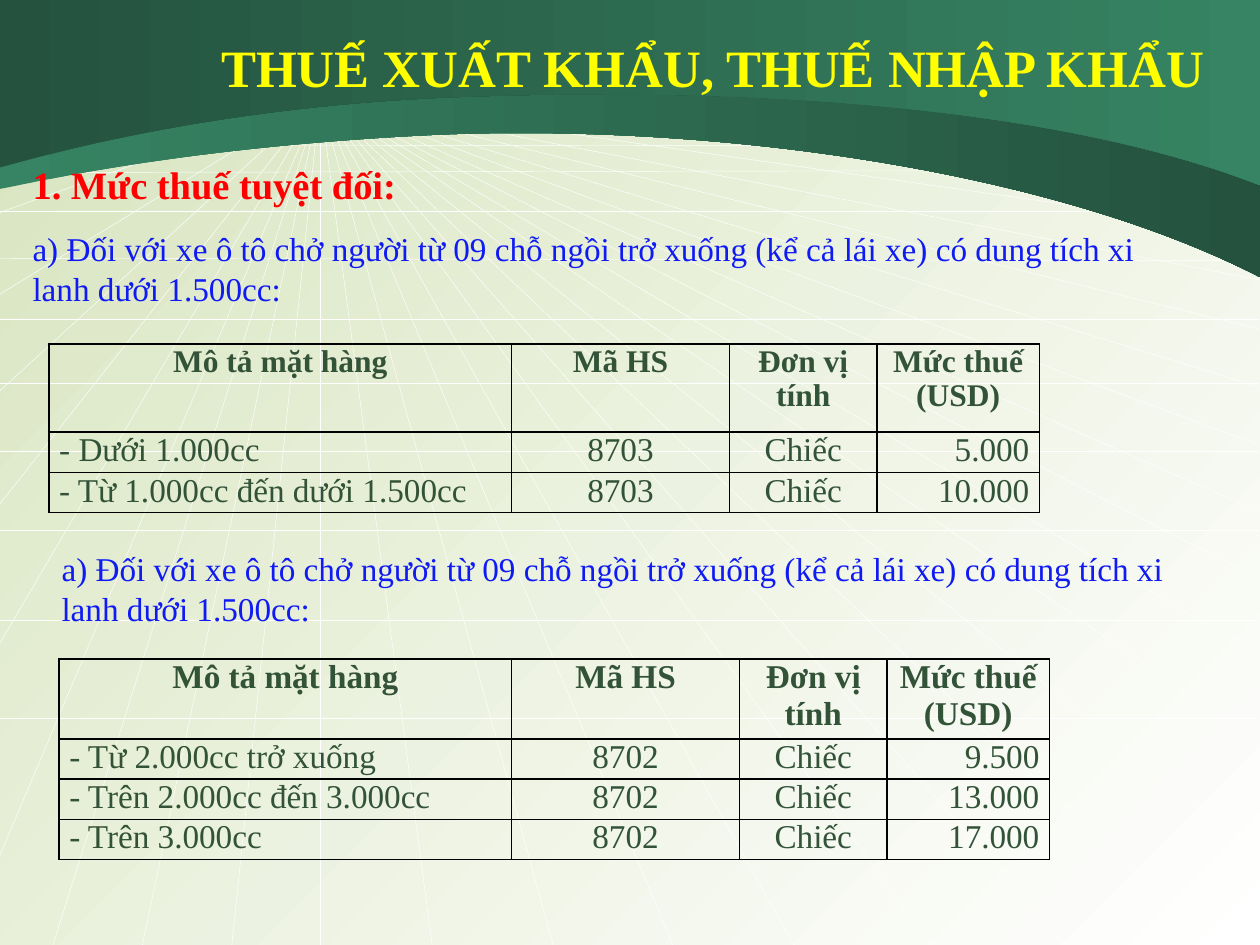
from dataclasses import dataclass
from lxml.etree import SubElement
from pptx import Presentation
from pptx.dml.color import RGBColor
from pptx.enum.shapes import MSO_CONNECTOR as Connector
from pptx.enum.text import MSO_ANCHOR as Anchor, PP_ALIGN as Align
from pptx.oxml.ns import qn
from pptx.util import Inches, Pt

FONT = "Times New Roman"
TEXT_GREEN = "335338"
BLUE = "101BF4"
DARK_GREEN = "24523E"
LIGHT_GREEN = "368463"
HUB = (2.54, 0.78)
LEFT_EDGE, RIGHT_EDGE, BOTTOM_EDGE = -0.01, 9.99, 7.5
RIGHT_RAYS = [5.89, 6.8, 5.2, 4.59, 4.06, 3.53, 3.07, 2.61, 2.22, 1.84, 1.54, 1.23, 1]
BOTTOM_RAYS = [9.6, 8.46, 7.38, 6.3, 5.34, 4.39, 3.43, 2.54, 1.84, 1.13, 0.42]
LEFT_RAYS = [6.81, 5.12, 4.01, 3.11, 2.34, 1.69, 1.16, 1.16, 0.97, 0.78]
LEVELS = [(5.7, 5.7), (4.92, 4.92), (4.21, 4.21), (3.58, 3.58), (3.04, 3.04), (2.53, 2.53),
          (2.05, 2.07), (1.68, 1.68), (1.37, 1.35), (1.15, 1.16), (1, 0.97), (0.9, 0.9),
          (0.84, 0.84)]
CAR_RULE = ("a) Đối với xe ô tô chở người từ 09 chỗ ngồi trở xuống (kể cả lái xe) "
            "có dung tích xi lanh dưới 1.500cc:")
HEADINGS = ("Mô tả mặt hàng", "Mã HS", "Đơn vị tính", "Mức thuế (USD)")
ALIGNMENTS = (Align.LEFT, Align.CENTER, Align.CENTER, Align.RIGHT)


@dataclass
class Band:
    top: float
    start: float
    curve: list
    colors: tuple


@dataclass
class Tariff:
    left: float
    top: float
    widths: list
    heading_height: float
    heading_size: float
    hs_code: str
    duties: list


BANDS = [
    Band(0, 1.5, [(0.11, 1.49), (1.33, 1.17), (3.47, 1.07),
                  (5.61, 0.98), (8.31, 1.33), (10, 2.2)], (LIGHT_GREEN, DARK_GREEN)),
    Band(-0.01, 1.33, [(0.11, 1.31), (1.51, 0.85), (3.64, 0.77),
                       (5.77, 0.69), (8.31, 0.81), (10, 1.47)], (DARK_GREEN, LIGHT_GREEN)),
]
TARIFFS = [
    Tariff(0.39, 2.73, [3.67, 1.73, 1.17, 1.29], 0.7, 18, "8703",
           [("- Dưới 1.000cc", "5.000"), ("- Từ 1.000cc đến dưới 1.500cc", "10.000")]),
    Tariff(0.47, 5.23, [3.59, 1.81, 1.17, 1.29], 0.63, 19, "8702",
           [("- Từ 2.000cc trở xuống", "9.500"), ("- Trên 2.000cc đến 3.000cc", "13.000"),
            ("- Trên 3.000cc", "17.000")]),
]


def rgb(value: str) -> RGBColor:
    return RGBColor.from_string(value)


def write(paragraph, text: str, *, size: float, color: str, bold: bool = False,
          align=Align.LEFT, before: float = 0) -> None:
    paragraph.alignment = align
    paragraph.space_before = Pt(before)
    run = paragraph.add_run()
    run.text = text
    run.font.name = FONT
    run.font.size = Pt(size)
    run.font.bold = bold
    run.font.color.rgb = rgb(color)


def add_frame(slide, left: float, top: float, width: float, height: float):
    frame = slide.shapes.add_textbox(
        Inches(left), Inches(top), Inches(width), Inches(height)).text_frame
    frame.word_wrap = True
    frame.vertical_anchor = Anchor.MIDDLE
    return frame


def paint_gradient(fill, colors: tuple, angle: float) -> None:
    fill.gradient()
    fill.gradient_angle = angle
    for stop, position, color in zip(fill.gradient_stops, (0, 1), colors):
        stop.position = position
        stop.color.rgb = rgb(color)


def draw_ray(slide, start: tuple, end: tuple) -> None:
    ray = slide.shapes.add_connector(Connector.STRAIGHT, *map(Inches, start + end))
    ray.line.color.rgb = rgb("FFFFFF")
    ray.line.width = Pt(0.25)
    SubElement(ray._element.spPr, qn("a:effectLst"))


def bend(shape, count: int) -> None:
    segments = list(shape._element.iter(qn("a:lnTo")))[:count]
    for first in range(0, count, 3):
        triple = segments[first:first + 3]
        curve = SubElement(triple[0].getparent(), qn("a:cubicBezTo"))
        triple[0].addprevious(curve)
        for segment in triple:
            curve.append(segment[0])
            segment.getparent().remove(segment)


def draw_band(slide, band: Band) -> None:
    builder = slide.shapes.build_freeform(Inches(LEFT_EDGE), Inches(band.start))
    corners = [(10, band.top), (LEFT_EDGE, band.top)]
    builder.add_line_segments([(Inches(x), Inches(y)) for x, y in band.curve + corners])
    shape = builder.convert_to_shape()
    bend(shape, len(band.curve))
    shape.shadow.inherit = False
    shape.line.fill.background()
    paint_gradient(shape.fill, band.colors, 0)


def border_cell(cell) -> None:
    properties = cell._tc.get_or_add_tcPr()
    for position, side in enumerate(("lnL", "lnR", "lnT", "lnB")):
        edge = SubElement(properties, qn(f"a:{side}"), w=str(Pt(1)))
        properties.insert(position, edge)
        SubElement(SubElement(edge, qn("a:solidFill")), qn("a:srgbClr"), val="000000")


def draw_tariff(slide, tariff: Tariff) -> None:
    rows = [HEADINGS] + [(goods, tariff.hs_code, "Chiếc", duty) for goods, duty in tariff.duties]
    heights = [tariff.heading_height] + [0.32] * len(tariff.duties)
    table = slide.shapes.add_table(
        len(rows), len(HEADINGS), Inches(tariff.left), Inches(tariff.top),
        Inches(sum(tariff.widths)), Inches(sum(heights))).table
    table.first_row = table.horz_banding = False
    for column, width in zip(table.columns, tariff.widths):
        column.width = Inches(width)
    for r, (values, height) in enumerate(zip(rows, heights)):
        table.rows[r].height = Inches(height)
        heading = r == 0
        for c, value in enumerate(values):
            cell = table.cell(r, c)
            cell.margin_left = cell.margin_right = Inches(0.08)
            cell.margin_top = cell.margin_bottom = 0
            cell.fill.background()
            border_cell(cell)
            write(cell.text_frame.paragraphs[0], value, color=TEXT_GREEN, bold=heading,
                  size=tariff.heading_size if heading else 19,
                  align=Align.CENTER if heading else ALIGNMENTS[c])


def main() -> None:
    deck = Presentation()
    deck.slide_width, deck.slide_height = Inches(10), Inches(7.5)
    slide = deck.slides.add_slide(deck.slide_layouts[6])
    paint_gradient(slide.background.fill, ("D7E4BE", "FFFFFF"), 315)

    ray_ends = ([(RIGHT_EDGE, y) for y in RIGHT_RAYS] + [(x, BOTTOM_EDGE) for x in BOTTOM_RAYS]
                + [(LEFT_EDGE, y) for y in LEFT_RAYS])
    for end in ray_ends:
        draw_ray(slide, HUB, end)
    for left_level, right_level in LEVELS:
        draw_ray(slide, (LEFT_EDGE, left_level), (RIGHT_EDGE, right_level))
    for band in BANDS:
        draw_band(slide, band)

    title = add_frame(slide, 1.62, 0.22, 8.08, 0.62)
    write(title.paragraphs[0], "THUẾ XUẤT KHẨU, THUẾ NHẬP KHẨU", size=30, color="FFFF00",
          bold=True, align=Align.CENTER)
    absolute_duty = add_frame(slide, 0.16, 1.22, 9.45, 1.28)
    write(absolute_duty.paragraphs[0], "1. Mức thuế tuyệt đối:", size=22, color="FF0000",
          bold=True)
    write(absolute_duty.add_paragraph(), CAR_RULE, size=19, color=BLUE, before=12)
    second_rule = add_frame(slide, 0.39, 4.3, 9.38, 0.74)
    write(second_rule.paragraphs[0], CAR_RULE, size=19, color=BLUE)
    for tariff in TARIFFS:
        draw_tariff(slide, tariff)

    deck.save("out.pptx")


if __name__ == "__main__":
    main()
